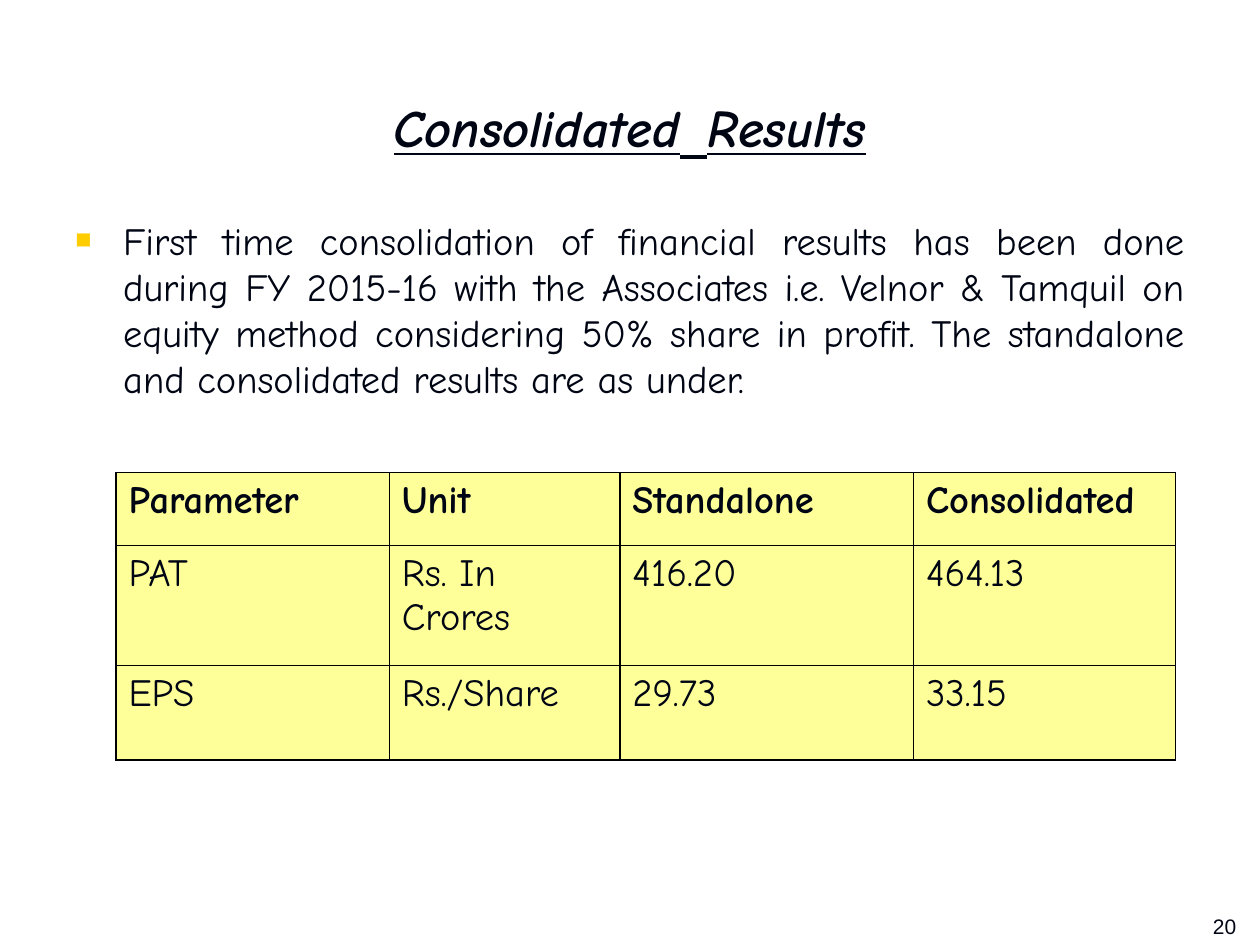
from dataclasses import dataclass

from lxml.etree import SubElement
from pptx import Presentation
from pptx.dml.color import RGBColor as RGB
from pptx.enum.text import MSO_ANCHOR as Anchor, PP_ALIGN as Align
from pptx.oxml.ns import qn
from pptx.util import Inches, Pt


@dataclass(frozen=True)
class Theme:
    font: str = "Comic Neue"
    number_font: str = "Arial"
    ink: str = "000514"
    paper: str = "FFFFFF"
    cell: str = "FFFF99"
    border: str = "000000"
    bullet: str = "FFCC00"
    title: int = 30
    title_gap: int = 44
    body: int = 22
    number: int = 12


T = Theme()
W, H = 10, 7.5
TITLE = [("Consolidated", T.title), (" ", T.title_gap), ("Results", T.title)]
BODY = (
    "First time consolidation of financial results has been done during "
    "FY 2015-16 with the Associates i.e. Velnor & Tamquil on equity method "
    "considering 50% share in profit. The standalone and consolidated "
    "results are as under."
)
PAGE = "20"
ROWS = [
    ("Parameter", "Unit", "Standalone", "Consolidated"),
    ("PAT", "Rs. In Crores", "416.20", "464.13"),
    ("EPS", "Rs./Share", "29.73", "33.15"),
]
COL_W = [2.17, 1.83, 2.33, 2.08]
ROW_H = [0.58, 0.95, 0.75]
MARGIN = 0.05 * W
CONTENT_W = W - 2 * MARGIN


def style(font, size, name=T.font, bold=False):
    font.name, font.size, font.bold = name, Pt(size), bold
    font.color.rgb = RGB.from_string(T.ink)


def add_text(s, box, align, anchor=Anchor.TOP):
    tf = s.shapes.add_textbox(*map(Inches, box)).text_frame
    tf.word_wrap = True
    tf.vertical_anchor = anchor
    p = tf.paragraphs[0]
    p.alignment = align
    return p


def add_bullet(p, char, indent):
    pPr = p._p.get_or_add_pPr()
    pPr.set("marL", str(Inches(indent)))
    pPr.set("indent", str(-Inches(indent)))
    color = SubElement(pPr, qn("a:buClr"))
    SubElement(color, qn("a:srgbClr"), val=T.bullet)
    SubElement(pPr, qn("a:buSzPct"), val="70000")
    SubElement(pPr, qn("a:buFont"), typeface=T.number_font)
    SubElement(pPr, qn("a:buChar"), char=char)


def add_borders(cell):
    tcPr = cell._tc.get_or_add_tcPr()
    for side in ("lnL", "lnR", "lnT", "lnB"):
        ln = SubElement(tcPr, qn(f"a:{side}"), w=str(Pt(1)))
        fill = SubElement(ln, qn("a:solidFill"))
        SubElement(fill, qn("a:srgbClr"), val=T.border)


def add_results(s, left, top):
    box = map(Inches, (left, top, sum(COL_W), sum(ROW_H)))
    table = s.shapes.add_table(len(ROWS), len(COL_W), *box).table
    for col, width in zip(table.columns, COL_W):
        col.width = Inches(width)
    for i, (row, height) in enumerate(zip(ROWS, ROW_H)):
        table.rows[i].height = Inches(height)
        for j, text in enumerate(row):
            cell = table.cell(i, j)
            add_borders(cell)
            cell.fill.solid()
            cell.fill.fore_color.rgb = RGB.from_string(T.cell)
            cell.text = text
            style(cell.text_frame.paragraphs[0].runs[0].font, T.body, bold=i == 0)


def main():
    prs = Presentation()
    prs.slide_width, prs.slide_height = Inches(W), Inches(H)
    s = prs.slides.add_slide(prs.slide_layouts[6])
    s.background.fill.solid()
    s.background.fill.fore_color.rgb = RGB.from_string(T.paper)

    p = add_text(s, (MARGIN, 0.3, CONTENT_W, 1.25), Align.CENTER, Anchor.MIDDLE)
    for text, size in TITLE:
        r = p.add_run()
        r.text = text
        style(r.font, size, bold=True)
        r.font.italic = r.font.underline = True

    p = add_text(s, (MARGIN, 1.67, CONTENT_W, 1.58), Align.JUSTIFY)
    p.text = BODY
    add_bullet(p, "■", 0.38)
    style(p.runs[0].font, T.body)

    add_results(s, 0.92, H / 2)

    p = add_text(s, (7.58, 6.98, 2.33, 0.52), Align.RIGHT, Anchor.BOTTOM)
    p.text = PAGE
    style(p.runs[0].font, T.number, T.number_font)

    prs.save("out.pptx")


if __name__ == "__main__":
    main()
